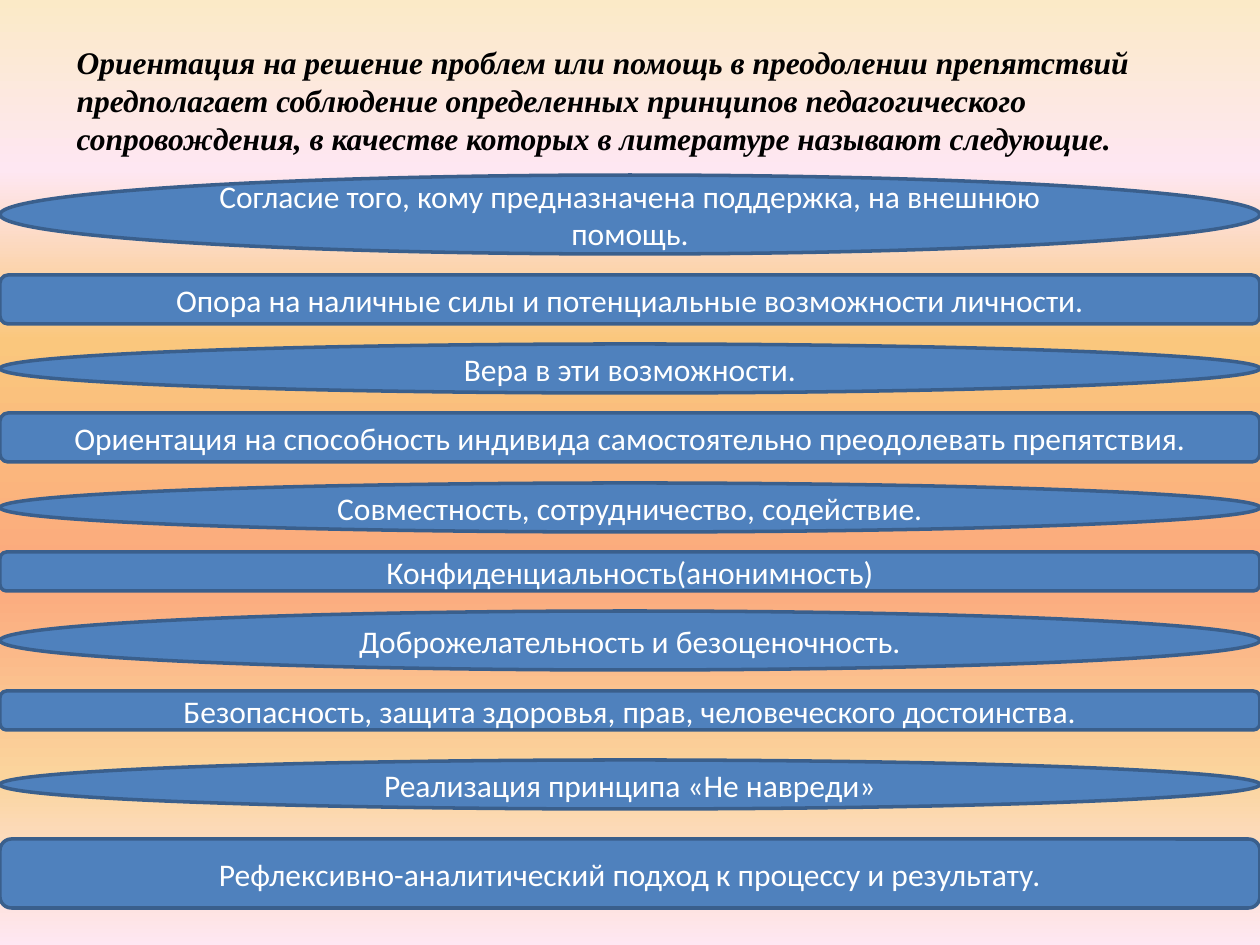
from lxml import etree
from pptx import Presentation
from pptx import util as u
from pptx.dml.color import RGBColor
from pptx.enum import shapes, text
from pptx.oxml import parse_xml
from pptx.oxml.ns import nsdecls, qn

PX = 914400 / 126
COLORS = {"bar": "4F81BD", "outline": "3A5F8C", "light": "FFFFFF", "dark": "000000"}
BACKGROUND = [(0, "FBEAC7"), (18, "FEE7F2"), (36, "FAC77D"),
              (61, "FBA97D"), (82, "FBD49C"), (100, "FEE7F2")]
TITLE = [
    "Ориентация на решение проблем или помощь в преодолении препятствий",
    "предполагает соблюдение определенных принципов педагогического",
    "сопровождения, в качестве которых в литературе называют следующие.",
]
PRINCIPLES = [
    (175, 79, "Согласие того, кому предназначена поддержка, на внешнюю помощь."),
    (275, 49, "Опора на наличные силы и потенциальные возможности личности."),
    (344, 49, "Вера в эти возможности."),
    (413, 49, "Ориентация на способность индивида самостоятельно преодолевать препятствия."),
    (483, 49, "Совместность, сотрудничество, содействие."),
    (552, 39, "Конфиденциальность(анонимность)"),
    (611, 59, "Доброжелательность и безоценочность."),
    (691, 39, "Безопасность, защита здоровья, прав, человеческого достоинства."),
    (760, 49, "Реализация принципа «Не навреди»"),
    (839, 69, "Рефлексивно-аналитический подход к процессу и результату."),
]


def px(value):
    """Turn pixels into EMU."""
    return u.Emu(round(value * PX))


def rgb(name):
    """Look up a named colour."""
    return RGBColor.from_string(COLORS[name])


def format_text(frame, font_name, color, alignment, emphasis=None):
    """Format every paragraph and run of a text frame."""
    for paragraph in frame.paragraphs:
        paragraph.alignment = alignment
        for run in paragraph.runs:
            run.font.name = font_name
            run.font.size = u.Pt(18)
            run.font.color.rgb = rgb(color)
            run.font.bold = run.font.italic = emphasis


def set_background(slide):
    """Give the slide a vertical gradient of several stops."""
    slide.background.fill.gradient()
    gradient = slide.background.fill._fill._gradFill
    for child in list(gradient):
        gradient.remove(child)
    stops = etree.SubElement(gradient, qn("a:gsLst"))
    for position, color in BACKGROUND:
        stops.append(parse_xml(
            f'<a:gs {nsdecls("a")} pos="{position * 1000}"><a:srgbClr val="{color}"/></a:gs>'))
    etree.SubElement(gradient, qn("a:lin"), ang="5400000", scaled="0")


def add_title(slide):
    """Place the introduction in the title placeholder."""
    title = slide.shapes.title
    title.left, title.top, title.width, title.height = map(px, (64, 37, 1189, 127))
    frame = title.text_frame
    frame.text = "\n".join(TITLE)
    frame.word_wrap = True
    frame.auto_size = text.MSO_AUTO_SIZE.SHAPE_TO_FIT_TEXT
    frame.vertical_anchor = text.MSO_ANCHOR.TOP
    format_text(frame, "Times New Roman", "dark", text.PP_ALIGN.LEFT, True)


def add_principle(slide, kind, top, height, wording):
    """Add a full-width shape that states one principle."""
    shape = slide.shapes.add_shape(kind, 0, px(top), px(1260), px(height))
    shape.shadow.inherit = False
    shape.fill.solid()
    shape.fill.fore_color.rgb = rgb("bar")
    shape.line.color.rgb = rgb("outline")
    shape.line.width = u.Pt(2)
    frame = shape.text_frame
    frame.text = wording
    frame.word_wrap = True
    frame.vertical_anchor = text.MSO_ANCHOR.MIDDLE
    format_text(frame, "Calibri", "light", text.PP_ALIGN.CENTER)


def main():
    """Build and save the slide."""
    presentation = Presentation()
    presentation.slide_width, presentation.slide_height = px(1260), px(945)
    slide = presentation.slides.add_slide(presentation.slide_layouts.get_by_name("Title Only"))
    set_background(slide)
    add_title(slide)
    kinds = (shapes.MSO_SHAPE.OVAL, shapes.MSO_SHAPE.ROUNDED_RECTANGLE)
    for index, principle in enumerate(PRINCIPLES):
        add_principle(slide, kinds[index % 2], *principle)
    presentation.save("out.pptx")


if __name__ == "__main__":
    main()
